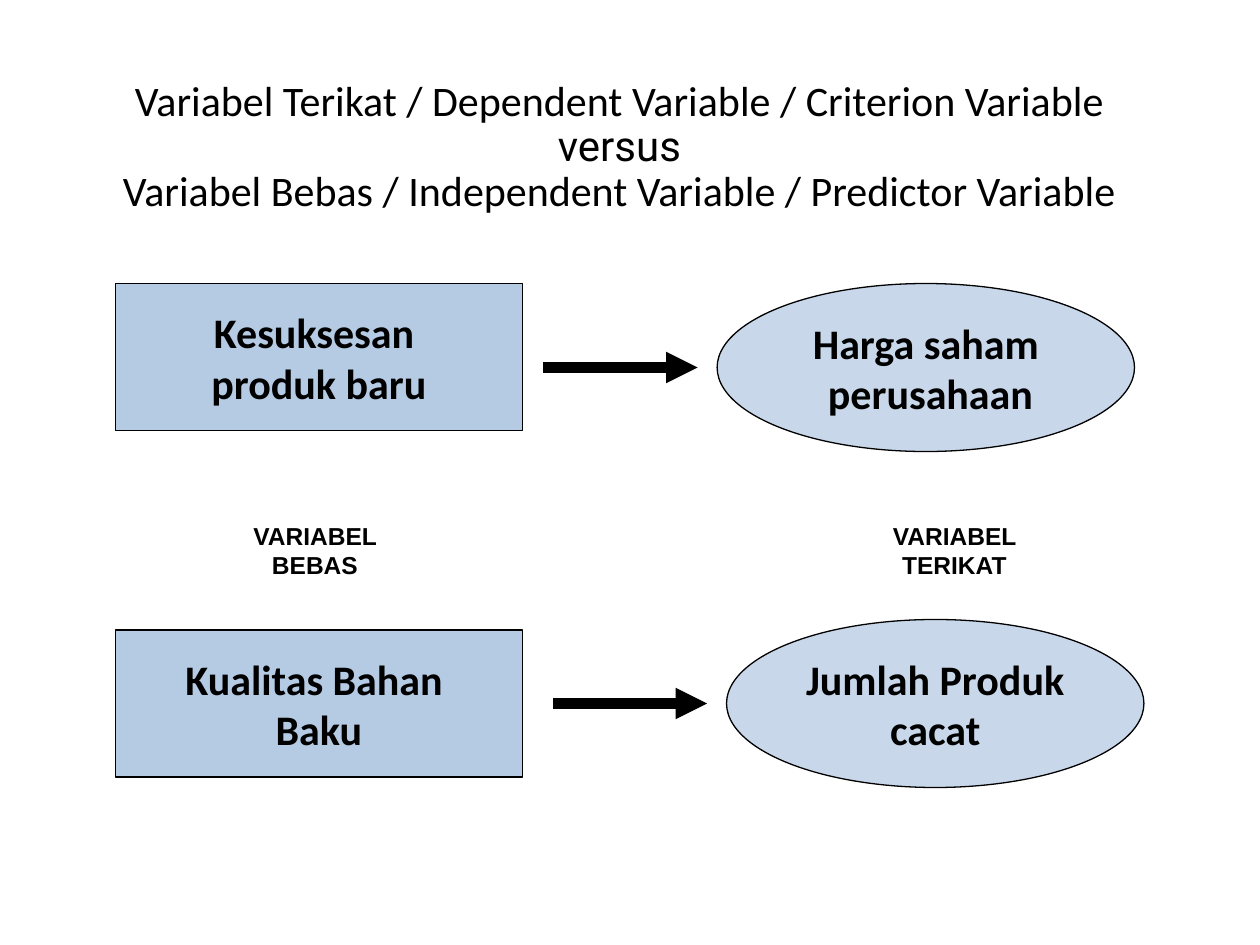
from dataclasses import dataclass

from lxml.etree import SubElement
from pptx import Presentation
from pptx.dml.color import RGBColor
from pptx.enum.shapes import MSO_CONNECTOR, MSO_SHAPE
from pptx.enum.text import MSO_ANCHOR, MSO_AUTO_SIZE, PP_ALIGN
from pptx.oxml.ns import qn
from pptx.util import Inches, Pt


@dataclass(frozen=True)
class Theme:
    ink: str = "000000"
    blue: str = "4F81BD"
    main: int = 24
    small: int = 14
    edge: float = 0.75
    bold: float = 6
    face: str = "Calibri"
    plain: str = "Arial"
    odd: str = "Roboto"


def write(frame, text, fonts, size, color, bold=False, gap=None,
          wrap=True, anchor=MSO_ANCHOR.TOP):
    """Fill a frame, one paragraph a line; fonts are used line by line."""
    frame.auto_size = MSO_AUTO_SIZE.NONE
    frame.word_wrap = wrap
    frame.vertical_anchor = anchor
    frame.text = text
    for para, name in zip(frame.paragraphs, fonts):
        para.alignment = PP_ALIGN.CENTER
        if gap:
            para.line_spacing = gap
        font = para.runs[0].font
        font.name, font.size, font.bold = name, Pt(size), bold
        font.color.rgb = RGBColor.from_string(color)


class Board:
    """Current slide on a grid of 120 columns by 90 rows."""

    def __init__(self, deck, theme):
        self.theme = theme
        self.slide = deck.slides.add_slide(deck.slide_layouts[5])
        self.col = deck.slide_width / 120
        self.row = deck.slide_height / 90

    def place(self, x, y, w, h):
        return (round(x * self.col), round(y * self.row),
                round(w * self.col), round(h * self.row))

    def title(self, text, fonts, *area):
        head = self.slide.shapes.title
        head.left, head.top, head.width, head.height = self.place(*area)
        write(head.text_frame, text, fonts, self.theme.main,
              self.theme.ink, gap=0.9)

    def node(self, kind, text, alpha, *area):
        look = self.theme
        shape = self.slide.shapes.add_shape(kind, *self.place(*area))
        shape.shadow.inherit = False
        shape.fill.solid()
        shape.fill.fore_color.rgb = RGBColor.from_string(look.blue)
        tint = shape.fill._xPr.find(".//" + qn("a:srgbClr"))
        SubElement(tint, qn("a:alpha"), val=str(alpha * 1000))
        shape.line.color.rgb = RGBColor.from_string(look.ink)
        shape.line.width = Pt(look.edge)
        write(shape.text_frame, text, [look.face] * 2, look.main, look.ink,
              bold=True, wrap=False, anchor=MSO_ANCHOR.MIDDLE)

    def arrow(self, x, y, span):
        left, top, width, _ = self.place(x, y, span, 0)
        link = self.slide.shapes.add_connector(
            MSO_CONNECTOR.STRAIGHT, left, top, left + width, top)
        link.line.color.rgb = RGBColor.from_string(self.theme.ink)
        link.line.width = Pt(self.theme.bold)
        SubElement(link.line._get_or_add_ln(), qn("a:tailEnd"),
                   type="triangle")
        SubElement(link._element.spPr, qn("a:effectLst"))

    def label(self, text, *area):
        look = self.theme
        box = self.slide.shapes.add_textbox(*self.place(*area))
        write(box.text_frame, text, [look.plain], look.small, look.ink,
              bold=True)


def main():
    deck = Presentation()
    deck.slide_width, deck.slide_height = Inches(10), Inches(7.5)
    theme = Theme()
    board = Board(deck, theme)

    # Title
    board.title("Variabel Terikat / Dependent Variable / Criterion Variable\n"
                "versus\n"
                "Variabel Bebas / Independent Variable / Predictor Variable",
                [theme.face, theme.odd, theme.face], 5, 7, 108, 23)

    # Cause and effect pairs; the lower one sits a little to the right
    pairs = [
        ("Kesuksesan \nproduk baru", "Harga saham\n perusahaan", 27, 27, 0),
        ("Kualitas Bahan \nBaku", "Jumlah Produk\ncacat", 60, 59, 0.9),
    ]
    for cause, effect, top, high, shift in pairs:
        board.node(MSO_SHAPE.RECTANGLE, cause, 42, 11, top, 38.75, 14)
        board.node(MSO_SHAPE.OVAL, effect, 31, 68.3 + shift, high, 39.75, 16)
        board.arrow(51.75 + shift, high + 8, 14.7)

    # Column labels
    board.label("VARIABEL BEBAS", 19.3, 49, 21.4, 4)
    board.label("VARIABEL TERIKAT", 79.3, 49, 23.2, 4)

    deck.save("out.pptx")


if __name__ == "__main__":
    main()
